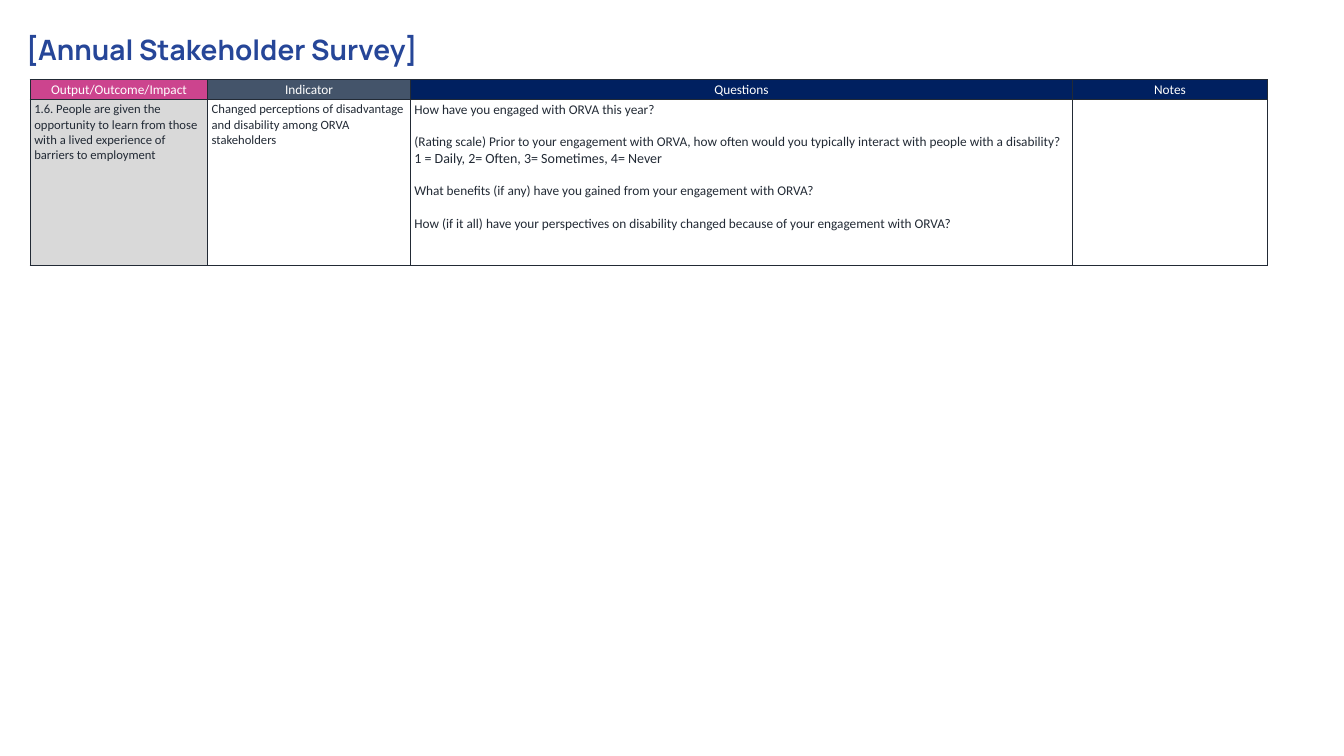
from lxml import etree
from pptx import Presentation
from pptx.dml.color import RGBColor
from pptx.enum.text import MSO_ANCHOR, MSO_AUTO_SIZE, PP_ALIGN
from pptx.oxml.ns import qn
from pptx.util import Inches, Pt

INK = "222A35"
WHITE = "FFFFFF"
COLUMNS = [
    ("Output/Outcome/Impact", 1.76, "CC448E"),
    ("Indicator", 2.01, "44546A"),
    ("Questions", 6.57, "002060"),
    ("Notes", 1.93, "002060"),
]
ROW_HEIGHTS = [0.2, 1.64]
OUTCOME = ("1.6. People are given the opportunity to learn from those "
           "with a lived experience of barriers to employment")
INDICATOR = "Changed perceptions of disadvantage and disability among ORVA stakeholders"
# Each question: text, size, space before
QUESTIONS = [
    ("How have you engaged with ORVA this year?", 9.5, 0),
    ("(Rating scale) Prior to your engagement with ORVA, how often would you "
     "typically interact with people with a disability?", 9.5, 11.5),
    ("1 = Daily, 2= Often, 3= Sometimes, 4= Never", 10, 0),
    ("What benefits (if any) have you gained from your engagement with ORVA?", 9.5, 11.5),
    ("How (if it all) have your perspectives on disability changed because of "
     "your engagement with ORVA?", 9.5, 11.5),
]


def rgb(value):
    return RGBColor.from_string(value)


def style_font(paragraph, name, size, color, bold=False):
    font = paragraph.font
    font.name, font.size, font.bold = name, Pt(size), bold
    font.color.rgb = rgb(color)


def add_borders(cell, color, width):
    properties = cell._tc.get_or_add_tcPr()
    for position, side in enumerate(("lnL", "lnR", "lnT", "lnB")):
        line = etree.Element(qn(f"a:{side}"), w=str(Pt(width)))
        fill = etree.SubElement(line, qn("a:solidFill"))
        etree.SubElement(fill, qn("a:srgbClr"), val=color)
        properties.insert(position, line)


def fill_cell(cell, lines, background, color=INK, align=PP_ALIGN.LEFT):
    """Write (text, size, space before) lines into a bordered, filled cell."""
    cell.margin_left = cell.margin_right = Inches(0.04)
    cell.margin_top = cell.margin_bottom = Inches(0.02)
    cell.fill.solid()
    cell.fill.fore_color.rgb = rgb(background)
    add_borders(cell, INK, 1)
    for index, (text, size, space_before) in enumerate(lines):
        frame = cell.text_frame
        paragraph = frame.add_paragraph() if index else frame.paragraphs[0]
        paragraph.text = text
        paragraph.alignment = align
        paragraph.space_before = Pt(space_before)
        style_font(paragraph, "Calibri", size, color)


def add_title(slide, text):
    title = slide.shapes.title
    title.left, title.top = Inches(0.16), Inches(0.34)
    title.width, title.height = Inches(13.17), Inches(0.44)
    frame = title.text_frame
    frame.text = text
    frame.word_wrap = True
    frame.auto_size = MSO_AUTO_SIZE.NONE
    frame.vertical_anchor = MSO_ANCHOR.TOP
    paragraph = frame.paragraphs[0]
    paragraph.alignment = PP_ALIGN.LEFT
    paragraph.line_spacing = 0.8
    paragraph.space_before = Pt(10)
    style_font(paragraph, "Manrope", 20, "264698", bold=True)


def add_survey_table(slide):
    table = slide.shapes.add_table(
        len(ROW_HEIGHTS), len(COLUMNS), Inches(0.3), Inches(0.79),
        Inches(sum(width for _, width, _ in COLUMNS)), Inches(sum(ROW_HEIGHTS))).table
    for row, height in zip(table.rows, ROW_HEIGHTS):
        row.height = Inches(height)
    for index, (heading, width, color) in enumerate(COLUMNS):
        table.columns[index].width = Inches(width)
        fill_cell(table.cell(0, index), [(heading, 9.5, 0)], color, WHITE, PP_ALIGN.CENTER)
    contents = [
        ([(OUTCOME, 9, 0)], "D9D9D9"),
        ([(INDICATOR, 9, 0)], WHITE),
        (QUESTIONS, WHITE),
        ([], WHITE),
    ]
    for index, (lines, background) in enumerate(contents):
        fill_cell(table.cell(1, index), lines, background)


def main():
    presentation = Presentation()
    presentation.slide_width, presentation.slide_height = Inches(13.33), Inches(7.5)
    slide = presentation.slides.add_slide(presentation.slide_layouts.get_by_name("Title Only"))
    add_title(slide, "[Annual Stakeholder Survey]")
    add_survey_table(slide)
    presentation.save("out.pptx")


if __name__ == "__main__":
    main()
